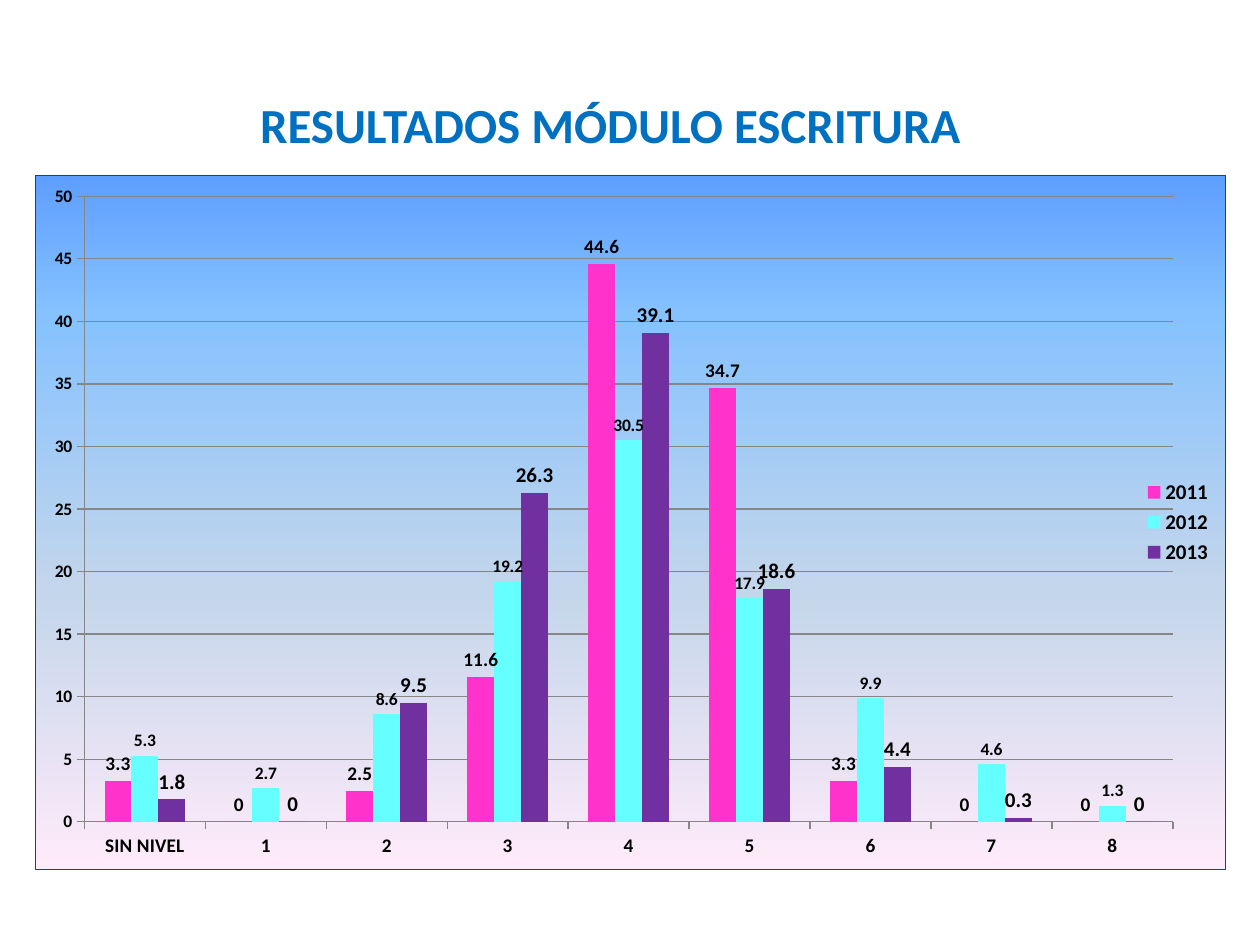
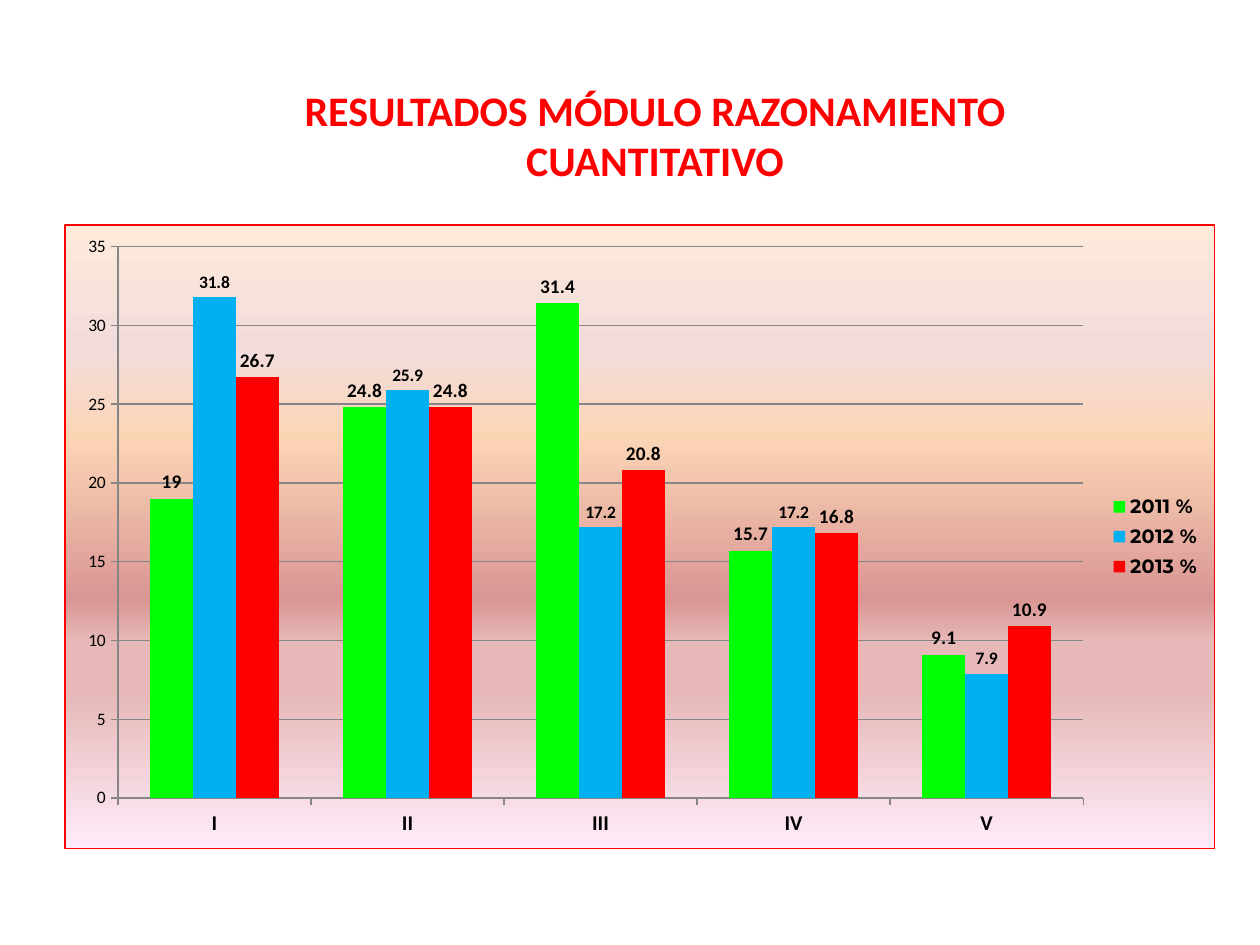
from dataclasses import dataclass

from lxml import etree
from pptx import Presentation
from pptx.chart.chart import Chart
from pptx.chart.data import CategoryChartData as ChartData
from pptx.dml.color import RGBColor as RGB
from pptx.enum.chart import XL_CHART_TYPE as Kind
from pptx.enum.chart import XL_LABEL_POSITION as Spot
from pptx.enum.chart import XL_LEGEND_POSITION as Side
from pptx.enum.chart import XL_TICK_MARK as Tick
from pptx.enum.text import MSO_ANCHOR as Anchor
from pptx.enum.text import MSO_AUTO_SIZE as Fit
from pptx.enum.text import PP_ALIGN as Align
from pptx.oxml import parse_xml
from pptx.oxml.ns import nsdecls, qn
from pptx.util import Cm, Pt

BODY = "Calibri"
ACCENT = "Montserrat"

BLACK = RGB(0, 0, 0)
GREY = RGB(0x86, 0x86, 0x86)
BLUE = RGB(0x00, 0x70, 0xC0)
NAVY = RGB(0x25, 0x40, 0x61)
PINK = RGB(0xFF, 0x33, 0xCC)
AQUA = RGB(0x66, 0xFF, 0xFF)
PURPLE = RGB(0x70, 0x30, 0xA0)
LIME = RGB(0x00, 0xFF, 0x00)
SKY = RGB(0x00, 0xB0, 0xF0)
RED = RGB(0xFF, 0x00, 0x00)
BLUSH = RGB(0xFF, 0xEB, 0xFA)
ROSE = RGB(0xE6, 0xB9, 0xB8)

DAWN = [(0, RGB(0x5E, 0x9E, 0xFF)), (20, RGB(0x85, 0xC2, 0xFF)),
        (60, RGB(0xC4, 0xD6, 0xEB)), (100, BLUSH)]
DUSK = [(0, RGB(0xFD, 0xEA, 0xDA)), (20, RGB(0xF2, 0xDC, 0xDB)),
        (34, RGB(0xFC, 0xD5, 0xB5)), (60, RGB(0xD9, 0x96, 0x94)),
        (67, ROSE), (75, ROSE), (100, BLUSH)]

Box = tuple[float, float, float, float]


@dataclass
class Bars:
    name: str
    vals: list[float]
    color: RGB
    size: int  # label size in points


@dataclass
class Page:
    title: str
    color: RGB
    size: int
    head: Box  # title box in cm
    area: Box  # chart box in cm
    plot: Box  # plot area as shares of the chart box
    cats: list[str]
    bars: list[Bars]
    top: int  # end of the value axis
    stops: list[tuple[int, RGB]]
    edge: RGB
    width: float
    cat_size: int
    val_bold: bool
    key_font: str
    key_size: int


PAGES = [
    Page("RESULTADOS MÓDULO ESCRITURA", BLUE, 28,
         (4.95, 1.78, 14.7, 1.45), (0.71, 3.53, 24, 14),
         (0.041, 0.03, 0.915, 0.902),
         ["SIN NIVEL", *"12345678"],
         [Bars("2011", [3.3, 0, 2.5, 11.6, 44.6, 34.7, 3.3, 0, 0], PINK, 11),
          Bars("2012", [5.3, 2.7, 8.6, 19.2, 30.5, 17.9, 9.9, 4.6, 1.3],
               AQUA, 10),
          Bars("2013", [1.8, 0, 9.5, 26.3, 39.1, 18.6, 4.4, 0.3, 0],
               PURPLE, 12)],
         50, DAWN, NAVY, 0.5, 11, True, BODY, 12),
    Page("RESULTADOS MÓDULO RAZONAMIENTO CUANTITATIVO", RED, 24,
         (4.57, 1.57, 17.27, 2.31), (1.3, 4.52, 23.19, 12.6),
         (0.046, 0.035, 0.84, 0.884),
         ["I", "II", "III", "IV", "V"],
         [Bars("2011 %", [19, 24.8, 31.4, 15.7, 9.1], LIME, 11),
          Bars("2012 %", [31.8, 25.9, 17.2, 17.2, 7.9], SKY, 10),
          Bars("2013 %", [26.7, 24.8, 20.8, 16.8, 10.9], RED, 11)],
         35, DUSK, RED, 0.75, 12, False, ACCENT, 11),
]


def style(font, size: int, bold: bool = True, name: str = BODY,
          color: RGB = BLACK) -> None:
    font.size, font.bold, font.name = Pt(size), bold, name
    font.color.rgb = color


def add_title(slide, page: Page) -> None:
    head = slide.shapes.title
    head.left, head.top, head.width, head.height = map(Cm, page.head)
    frame = head.text_frame
    frame.text = page.title
    frame.word_wrap = True
    frame.auto_size = Fit.SHAPE_TO_FIT_TEXT
    frame.vertical_anchor = Anchor.TOP
    para = frame.paragraphs[0]
    para.alignment = Align.CENTER
    style(para.font, page.size, color=page.color)


def set_back(chart: Chart, page: Page) -> None:
    """Give the chart area its gradient and border."""
    stops = "".join(
        f'<a:gs pos="{pos * 1000}"><a:srgbClr val="{color}"/></a:gs>'
        for pos, color in page.stops)
    back = parse_xml(
        f'<c:spPr {nsdecls("c", "a")}>'
        f'<a:gradFill><a:gsLst>{stops}</a:gsLst>'
        '<a:lin ang="5400000" scaled="0"/></a:gradFill>'
        f'<a:ln w="{Pt(page.width)}"><a:solidFill>'
        f'<a:srgbClr val="{page.edge}"/></a:solidFill></a:ln></c:spPr>')
    chart.element.find(qn("c:chart")).addnext(back)


def set_plot(chart: Chart, plot: Box) -> None:
    """Fix the inner plot area."""
    area = chart.element.find(".//" + qn("c:plotArea"))
    for old in area.findall(qn("c:layout")):
        area.remove(old)
    lay = etree.Element(qn("c:layout"))
    spot = etree.SubElement(lay, qn("c:manualLayout"))
    marks = [("layoutTarget", "inner"), ("xMode", "edge"), ("yMode", "edge"),
             *zip("xywh", plot)]
    for tag, val in marks:
        etree.SubElement(spot, qn(f"c:{tag}")).set("val", str(val))
    area.insert(0, lay)


def set_axes(chart: Chart, page: Page) -> None:
    cat, val = chart.category_axis, chart.value_axis
    val.minimum_scale, val.maximum_scale, val.major_unit = 0, page.top, 5
    val.has_major_gridlines = True
    val.major_gridlines.format.line.color.rgb = GREY
    for axis in (cat, val):
        axis.major_tick_mark = Tick.OUTSIDE
        axis.minor_tick_mark = Tick.NONE
        axis.format.line.color.rgb = GREY
    style(cat.tick_labels.font, page.cat_size)
    style(val.tick_labels.font, 10, page.val_bold)


def set_bars(chart: Chart, bars: list[Bars]) -> None:
    plot = chart.plots[0]
    plot.gap_width, plot.overlap, plot.vary_by_categories = 150, 0, False
    for row, bar in zip(plot.series, bars):
        row.format.fill.solid()
        row.format.fill.fore_color.rgb = bar.color
        row.invert_if_negative = False
        tags = row.data_labels
        tags.show_value = True
        tags.position = Spot.OUTSIDE_END
        style(tags.font, bar.size)


def add_chart(slide, page: Page) -> None:
    data = ChartData()
    data.categories = page.cats
    for bar in page.bars:
        data.add_series(bar.name, bar.vals)
    chart = slide.shapes.add_chart(
        Kind.COLUMN_CLUSTERED, *map(Cm, page.area), data).chart
    chart.has_title = False
    style(chart.font, 10, False)
    set_back(chart, page)
    set_plot(chart, page.plot)
    set_axes(chart, page)
    set_bars(chart, page.bars)
    chart.has_legend = True
    chart.legend.position = Side.RIGHT
    chart.legend.include_in_layout = False
    style(chart.legend.font, page.key_size, name=page.key_font)


def main() -> None:
    deck = Presentation()
    deck.slide_width, deck.slide_height = Cm(25.4), Cm(19.05)
    for page in PAGES:
        slide = deck.slides.add_slide(deck.slide_layouts[5])
        add_title(slide, page)
        add_chart(slide, page)
    deck.save("out.pptx")


if __name__ == "__main__":
    main()
